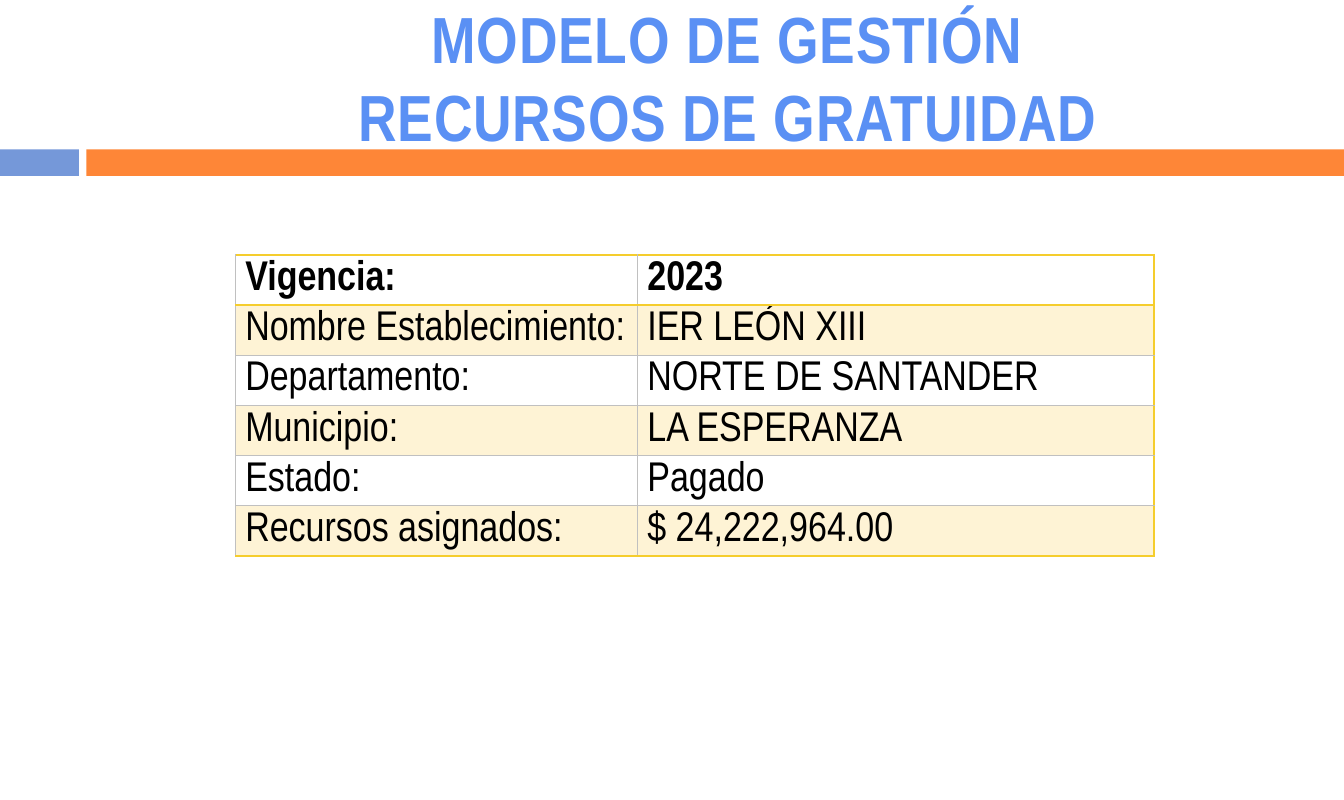
"""Build the slide on the school funds management model."""
from lxml import etree
from pptx import Presentation
from pptx.dml.color import RGBColor
from pptx.enum.shapes import MSO_SHAPE
from pptx.enum.text import MSO_ANCHOR, PP_ALIGN
from pptx.oxml.ns import qn
from pptx.util import Inches, Pt

RECT = MSO_SHAPE.RECTANGLE
MIDDLE = MSO_ANCHOR.MIDDLE
CENTER = PP_ALIGN.CENTER
FONT = "Arial Narrow"
BLUE = RGBColor(0x75, 0x98, 0xD9)
ORANGE = RGBColor(0xFE, 0x86, 0x37)
TITLE = RGBColor(0x5A, 0x90, 0xF4)
GOLD = RGBColor(0xF5, 0xCD, 0x2D)
CREAM = RGBColor(0xFE, 0xF3, 0xD5)
GRAY = RGBColor(0xC0, 0xC0, 0xC0)
BLACK = RGBColor(0, 0, 0)

ROWS = [
    ("Vigencia:", "2023"),
    ("Nombre Establecimiento:", "IER LEÓN XIII"),
    ("Departamento:", "NORTE DE SANTANDER"),
    ("Municipio:", "LA ESPERANZA"),
    ("Estado:", "Pagado"),
    ("Recursos asignados:", "$ 24,222,964.00"),
]
WIDTHS = (3.77, 4.84)
HEIGHT = 0.47


def style(para, size, color, bold):
    font = para.font
    font.name, font.size, font.bold = FONT, Pt(size), bold
    font.color.rgb = color


def add_bar(slide, left, width, color):
    bar = slide.shapes.add_shape(
        RECT, Inches(left), Inches(1.4), Inches(width), Inches(0.25))
    bar.shadow.inherit = False
    bar.fill.solid()
    bar.fill.fore_color.rgb = color
    bar.line.fill.background()


def set_title(slide, text):
    title = slide.shapes.title
    title.left, title.top = Inches(2.71), Inches(0.13)
    title.width, title.height = Inches(8.23), Inches(1.18)
    frame = title.text_frame
    frame.text = text
    frame.word_wrap = True
    frame.vertical_anchor = MIDDLE
    para = frame.paragraphs[0]
    para.alignment = CENTER
    para.line_spacing = 1.0
    style(para, 44, TITLE, True)
    for run in para.runs:
        run.font._element.set("spc", "50")


def set_edge(cell, side, color, width):
    props = cell._tc.get_or_add_tcPr()
    line = etree.SubElement(props, qn(f"a:ln{side}"), w=str(Pt(width)))
    fill = etree.SubElement(line, qn("a:solidFill"))
    etree.SubElement(fill, qn("a:srgbClr"), val=str(color))


def set_cell(cell, text, row, col):
    last = len(ROWS) - 1
    gold = {
        "L": False,
        "R": col == len(WIDTHS) - 1,
        "T": row <= 1,
        "B": row in (0, last),
    }
    for side, strong in gold.items():
        set_edge(cell, side, GOLD if strong else GRAY, 1.5 if strong else 0.5)
    if row % 2:
        cell.fill.solid()
        cell.fill.fore_color.rgb = CREAM
    else:
        cell.fill.background()
    cell.margin_left = cell.margin_right = Inches(0.09)
    cell.margin_top = cell.margin_bottom = 0
    cell.vertical_anchor = MIDDLE
    cell.text = text
    style(cell.text_frame.paragraphs[0], 28, BLACK, row == 0)


def add_grid(slide):
    table = slide.shapes.add_table(
        len(ROWS), len(WIDTHS), Inches(2.21), Inches(2.39),
        Inches(sum(WIDTHS)), Inches(HEIGHT * len(ROWS))).table
    for col, width in enumerate(WIDTHS):
        table.columns[col].width = Inches(width)
    for row, texts in enumerate(ROWS):
        table.rows[row].height = Inches(HEIGHT)
        for col, text in enumerate(texts):
            set_cell(table.cell(row, col), text, row, col)


def main():
    deck = Presentation()
    deck.slide_width, deck.slide_height = Inches(12.6), Inches(7.5)
    slide = deck.slides.add_slide(deck.slide_layouts[5])
    add_bar(slide, 0, 0.74, BLUE)
    add_bar(slide, 0.81, 11.79, ORANGE)
    set_title(slide, "MODELO DE GESTIÓN\vRECURSOS DE GRATUIDAD")
    add_grid(slide)
    deck.save("out.pptx")


if __name__ == "__main__":
    main()
